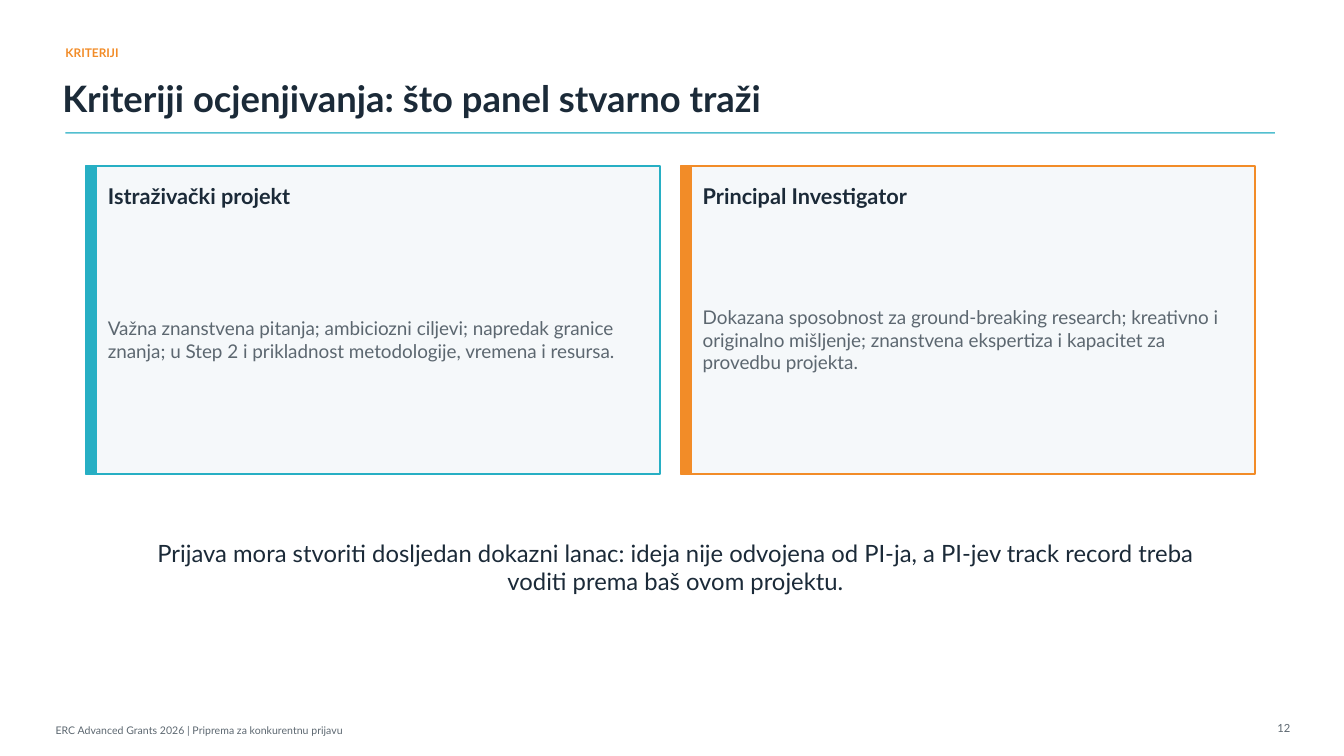
from lxml.etree import SubElement
from pptx import Presentation
from pptx.dml.color import RGBColor
from pptx.enum.shapes import MSO_CONNECTOR, MSO_SHAPE
from pptx.enum.text import MSO_ANCHOR, PP_ALIGN
from pptx.oxml.ns import qn
from pptx.util import Cm, Pt

COLORS = {
    "navy": "1B2A38",
    "gray": "5C6770",
    "teal": "27AFC4",
    "orange": "F28C28",
    "panel": "F5F8FA",
}
FONT = "Lato"

LABELS = [
    ("KRITERIJI", (1.65, 1.02, 29.97, 0.61), 8.5, "orange", True, PP_ALIGN.LEFT),
    ("Kriteriji ocjenjivanja: što panel stvarno traži",
     (1.57, 1.78, 30.23, 1.4), 26, "navy", True, PP_ALIGN.LEFT),
    ("Prijava mora stvoriti dosljedan dokazni lanac: ideja nije odvojena od PI-ja, "
     "a PI-jev track record treba voditi prema baš ovom projektu.",
     (3.18, 13.59, 27.69, 1.4), 17, "navy", False, PP_ALIGN.CENTER),
    ("ERC Advanced Grants 2026 | Priprema za konkurentnu prijavu",
     (1.4, 18.16, 18.8, 0.51), 7.5, "gray", False, PP_ALIGN.LEFT),
    ("12", (31.88, 18.08, 0.64, 0.51), 8, "gray", False, PP_ALIGN.RIGHT),
]

CARDS = [
    ("Istraživački projekt",
     "Važna znanstvena pitanja; ambiciozni ciljevi; napredak granice znanja; "
     "u Step 2 i prikladnost metodologije, vremena i resursa.", "teal"),
    ("Principal Investigator",
     "Dokazana sposobnost za ground-breaking research; kreativno i originalno "
     "mišljenje; znanstvena ekspertiza i kapacitet za provedbu projekta.", "orange"),
]
CARD_LEFT, CARD_TOP, CARD_WIDTH, CARD_HEIGHT = 2.16, 4.19, 14.48, 7.75
CARD_GAP, STRIPE_WIDTH = 0.51, 0.28
TEXT_INSET, TEXT_WIDTH = 0.56, 13.59


def rgb(name):
    return RGBColor.from_string(COLORS[name])


def add_text(slide, text, box, size, color, bold=False, align=PP_ALIGN.LEFT):
    frame = slide.shapes.add_textbox(*map(Cm, box)).text_frame
    frame.word_wrap = True
    frame.vertical_anchor = MSO_ANCHOR.MIDDLE
    frame.margin_left = frame.margin_right = frame.margin_top = frame.margin_bottom = 0
    paragraph = frame.paragraphs[0]
    paragraph.alignment = align
    run = paragraph.add_run()
    run.text = text
    run.font.name = FONT
    run.font.size = Pt(size)
    run.font.bold = bold
    run.font.color.rgb = rgb(color)


def add_rectangle(slide, box, fill, line, line_width):
    shape = slide.shapes.add_shape(MSO_SHAPE.RECTANGLE, *map(Cm, box))
    shape.shadow.inherit = False
    shape.fill.solid()
    shape.fill.fore_color.rgb = rgb(fill)
    shape.line.color.rgb = rgb(line)
    shape.line.width = Pt(line_width)


def add_title_rule(slide):
    rule = slide.shapes.add_connector(
        MSO_CONNECTOR.STRAIGHT, Cm(1.65), Cm(3.35), Cm(32.13), Cm(3.35))
    rule.line.color.rgb = rgb("teal")
    rule.line.width = Pt(1.1)
    properties = rule._element.spPr
    color = properties.find(".//" + qn("a:srgbClr"))
    SubElement(color, qn("a:alpha")).set("val", "80000")
    SubElement(properties, qn("a:effectLst"))


def add_card(slide, index, heading, body, accent):
    left = CARD_LEFT + index * (CARD_WIDTH + CARD_GAP)
    text_left = left + TEXT_INSET
    add_rectangle(slide, (left, CARD_TOP, CARD_WIDTH, CARD_HEIGHT), "panel", accent, 1.1)
    add_rectangle(slide, (left, CARD_TOP, STRIPE_WIDTH, CARD_HEIGHT), accent, accent, 1)
    add_text(slide, heading, (text_left, CARD_TOP + 0.38, TEXT_WIDTH, 0.71),
             15.5, "navy", True)
    add_text(slide, body, (text_left, CARD_TOP + 1.32, TEXT_WIDTH, 6.1), 13.5, "gray")


def main():
    presentation = Presentation()
    presentation.slide_width = Cm(33.87)
    presentation.slide_height = Cm(19.05)
    slide = presentation.slides.add_slide(presentation.slide_layouts[6])
    add_title_rule(slide)
    for index, card in enumerate(CARDS):
        add_card(slide, index, *card)
    for label in LABELS:
        add_text(slide, *label)
    presentation.save("out.pptx")


if __name__ == "__main__":
    main()
